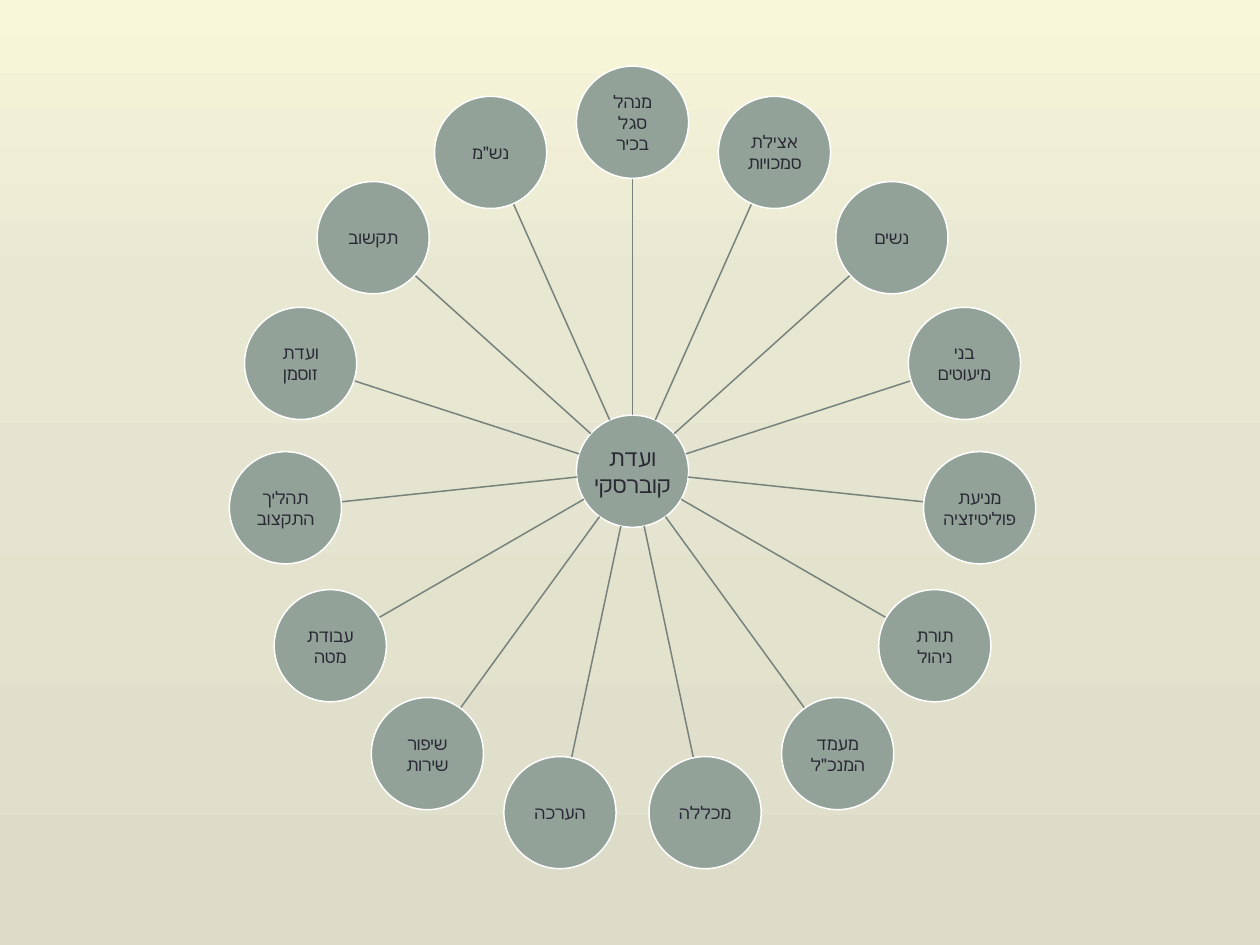
from copy import deepcopy
from math import cos, radians, sin

from lxml import etree
from pptx import Presentation
from pptx.dml.color import RGBColor
from pptx.enum.shapes import MSO_CONNECTOR, MSO_SHAPE
from pptx.enum.text import MSO_ANCHOR, PP_ALIGN
from pptx.oxml.ns import qn
from pptx.util import Inches, Pt

OVAL = MSO_SHAPE.OVAL
LINE = MSO_CONNECTOR.STRAIGHT
MIDDLE = MSO_ANCHOR.MIDDLE
CENTER = PP_ALIGN.CENTER

COLORS = {"node": "93A299", "edge": "FFFFFF", "spoke": "76827B", "text": "292934"}
SKY = [(0, "F8F7D9"), (0.31, "E8E7D2"), (1, "DDDCC8")]
FONT = "Arial"

HUB = "ועדת\nקוברסקי"
# Clockwise from the top
TOPICS = [
    "מנהל\nסגל\nבכיר", "אצילת\nסמכויות", "נשים", "בני\nמיעוטים",
    "מניעת\nפוליטיזציה", "תורת\nניהול", "מעמד\nהמנכ\"ל", "מכללה",
    "הערכה", "שיפור\nשירות", "עבודת\nמטה", "תהליך\nהתקצוב",
    "ועדת\nזוסמן", "תקשוב", "נש\"מ",
]
MID_X, MID_Y = 5.02, 3.74
RING = 2.77
SIZE = 0.89


def rgb(name):
    return RGBColor.from_string(COLORS[name])


def add_node(text, x, y, size=10, color="text"):
    node = slide.shapes.add_shape(
        OVAL, Inches(x - SIZE / 2), Inches(y - SIZE / 2), Inches(SIZE), Inches(SIZE))
    node.shadow.inherit = False
    node.fill.solid()
    node.fill.fore_color.rgb = rgb("node")
    node.line.color.rgb = rgb("edge")
    node.line.width = Pt(0.85)
    # Each label line is its own paragraph, so words never break
    frame = node.text_frame
    frame.word_wrap = False
    frame.vertical_anchor = MIDDLE
    frame.margin_left = frame.margin_right = Inches(0.01)
    frame.margin_top = frame.margin_bottom = Inches(0.01)
    for i, words in enumerate(text.split("\n")):
        para = frame.paragraphs[0] if i == 0 else frame.add_paragraph()
        para.alignment = CENTER
        para._p.get_or_add_pPr().set("rtl", "1")
        run = para.add_run()
        run.text = words
        run.font.size = Pt(size)
        run.font.name = FONT
        run.font.color.rgb = rgb(color)


deck = Presentation()
deck.slide_width, deck.slide_height = Inches(10), Inches(7.5)
slide = deck.slides.add_slide(deck.slide_layouts[6])

# Background, top to bottom
fill = slide.background.fill
fill.gradient()
fill.gradient_angle = 270
stops = fill._fill._gradFill.find(qn("a:gsLst"))
stops.append(deepcopy(stops[0]))
for stop, (place, color) in zip(fill.gradient_stops, SKY):
    stop.color.rgb = RGBColor.from_string(color)
    stop.position = place

# Hub
add_node(HUB, MID_X, MID_Y, size=13)

# Spokes and topics
for i, topic in enumerate(TOPICS):
    turn = radians(360 / len(TOPICS) * i - 90)
    dx, dy = cos(turn), sin(turn)
    near, far = SIZE / 2, RING - SIZE / 2
    spoke = slide.shapes.add_connector(
        LINE, Inches(MID_X + near * dx), Inches(MID_Y + near * dy),
        Inches(MID_X + far * dx), Inches(MID_Y + far * dy))
    spoke.line.color.rgb = rgb("spoke")
    spoke.line.width = Pt(0.85)
    etree.SubElement(spoke._element.spPr, qn("a:effectLst"))
    add_node(topic, MID_X + RING * dx, MID_Y + RING * dy)

deck.save("out.pptx")
